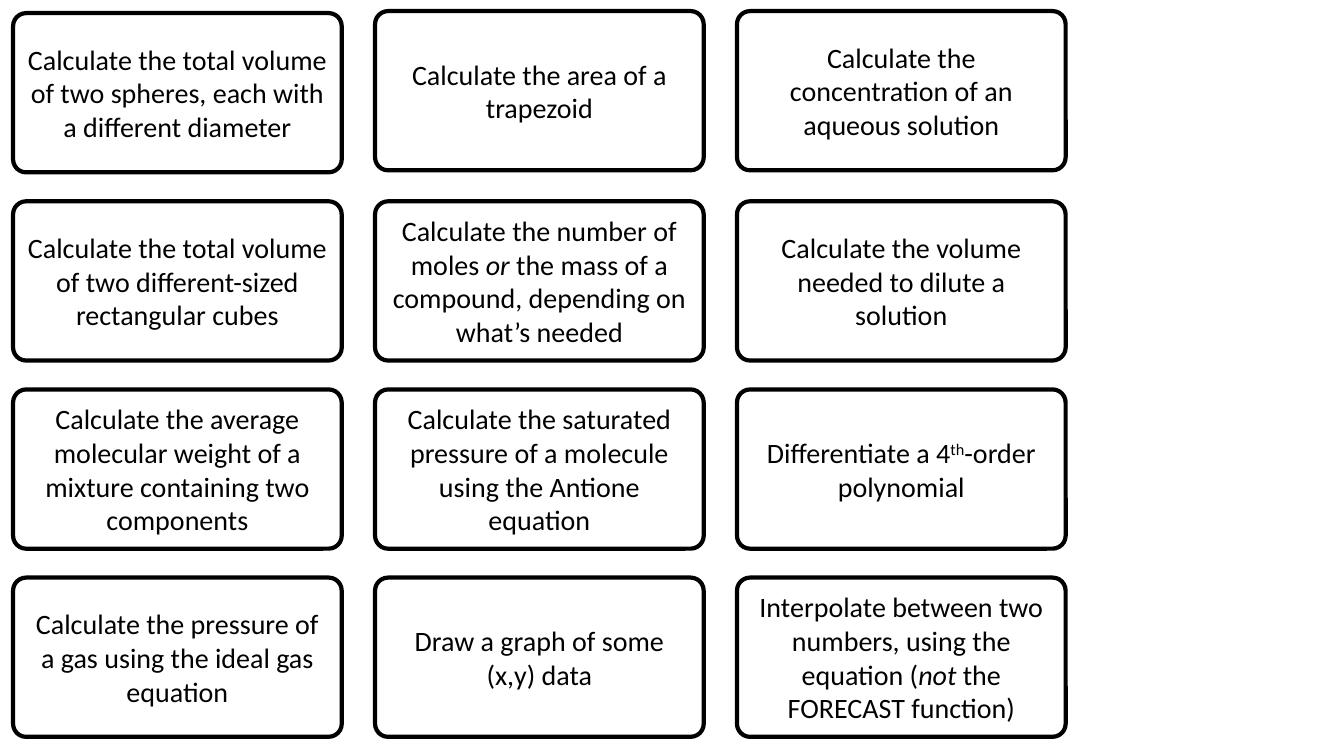
from pptx import Presentation
from pptx.dml.color import RGBColor
from pptx.enum.shapes import MSO_SHAPE
from pptx.enum.text import MSO_ANCHOR, PP_ALIGN
from pptx.util import Inches, Pt

# Content: one list per column, top to bottom; a tuple holds (text, style) runs
COLUMNS = [
    [
        "Calculate the total volume of two spheres, each with a different diameter",
        "Calculate the total volume of two different-sized rectangular cubes",
        "Calculate the average molecular weight of a mixture containing two components",
        "Calculate the pressure of a gas using the ideal gas equation",
    ],
    [
        "Calculate the area of a trapezoid",
        (("Calculate the number of moles ", ""), ("or", "italic"),
         (" the mass of a compound, depending on what’s needed", "")),
        "Calculate the saturated pressure of a molecule using the Antione equation",
        "Draw a graph of some (x,y) data",
    ],
    [
        "Calculate the concentration of an aqueous solution",
        "Calculate the volume needed to dilute a solution",
        (("Differentiate a 4", ""), ("th", "super"), ("-order polynomial", "")),
        (("Interpolate between two numbers, using the equation (", ""),
         ("not", "italic"), (" the FORECAST function)", "")),
    ],
]

# Grid, in inches
SLIDE_W, SLIDE_H = 13.33, 7.5
LEFT, TOP = 0.13, 0.13
CARD_W, CARD_H = 3.26, 1.58
COL_STEP = 3.59
ROW_STEP = 5.6 / 3
RAISE = 0.02  # top cards right of the first column sit slightly higher
CORNER = 0.082

INK = "000000"
FONT = {"name": "Calibri", "size": Pt(20)}


def color(hex_value):
    return RGBColor.from_string(hex_value)


def add_card(slide, x, y, content):
    sp = slide.shapes.add_shape(MSO_SHAPE.ROUNDED_RECTANGLE, Inches(x), Inches(y),
                                Inches(CARD_W), Inches(CARD_H))
    sp.adjustments[0] = CORNER
    sp.shadow.inherit = False
    sp.fill.background()
    sp.line.color.rgb = color(INK)
    sp.line.width = Pt(3)

    # Centred text
    tf = sp.text_frame
    tf.word_wrap = True
    tf.vertical_anchor = MSO_ANCHOR.MIDDLE
    p = tf.paragraphs[0]
    p.alignment = PP_ALIGN.CENTER
    runs = ((content, ""),) if isinstance(content, str) else content
    for text, style in runs:
        r = p.add_run()
        r.text = text
        for key, value in FONT.items():
            setattr(r.font, key, value)
        r.font.color.rgb = color(INK)
        if style == "italic":
            r.font.italic = True
        elif style == "super":
            r._r.get_or_add_rPr().set("baseline", "30000")


def main():
    prs = Presentation()
    prs.slide_width, prs.slide_height = Inches(SLIDE_W), Inches(SLIDE_H)
    slide = prs.slides.add_slide(prs.slide_layouts[6])

    # Task cards
    for col, cards in enumerate(COLUMNS):
        for row, content in enumerate(cards):
            y = TOP + row * ROW_STEP
            if row == 0 and col > 0:
                y -= RAISE
            add_card(slide, LEFT + col * COL_STEP, y, content)

    prs.save("out.pptx")


if __name__ == "__main__":
    main()
